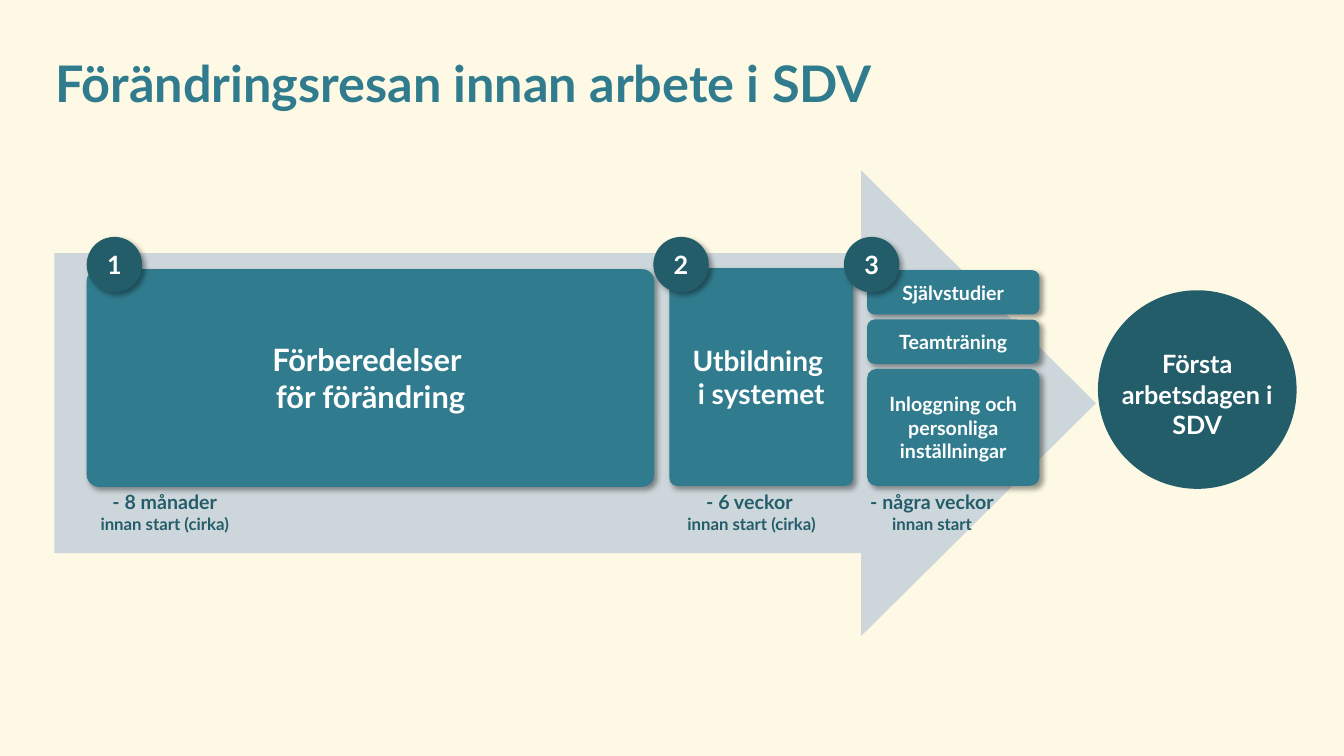
from dataclasses import dataclass

from lxml.etree import SubElement
from pptx import Presentation
from pptx.dml.color import RGBColor
from pptx.enum.shapes import MSO_SHAPE
from pptx.enum.text import MSO_ANCHOR, PP_ALIGN
from pptx.oxml.ns import qn
from pptx.shapes.autoshape import Shape
from pptx.slide import Slide
from pptx.text.text import TextFrame
from pptx.util import Inches, Pt

COLORS = {
    "background": "FDF9E4",
    "arrow": "CDD7DB",
    "teal": "307C8E",
    "dark": "245D6A",
    "white": "FFFFFF",
    "shadow": "000000",
}
FONT = "Lato"
BADGE_SIZE = 0.55
BADGE_TOP = 2.35
LABEL_TOP = 4.81
LABEL_WIDTH = 1.83


@dataclass
class Step:
    left: float
    top: float
    width: float
    height: float
    corner: float
    size: int
    lines: list[str]


@dataclass
class Milestone:
    badge_left: float
    label_left: float
    time: str
    note: str


STEPS = [
    Step(8.6, 2.68, 1.71, 0.44, 0.167, 14, ["Självstudier"]),
    Step(8.6, 3.17, 1.71, 0.44, 0.167, 14, ["Teamträning"]),
    Step(8.6, 3.66, 1.71, 1.16, 0.08, 14, ["Inloggning och personliga inställningar"]),
    Step(6.64, 2.66, 1.82, 2.16, 0.04, 20, ["Utbildning ", "i systemet"]),
    Step(0.86, 2.67, 5.63, 2.16, 0.056, 22, ["Förberedelser ", "för förändring"]),
]
MILESTONES = [
    Milestone(0.86, 0.72, "- 8 månader", "innan start (cirka)"),
    Milestone(6.48, 6.54, "- 6 veckor ", "innan start (cirka)"),
    Milestone(8.37, 8.33, "- några veckor", "innan start"),
]


def rgb(name: str) -> RGBColor:
    return RGBColor.from_string(COLORS[name])


def write_lines(frame: TextFrame, lines: list[str], sizes: list[int], color: str,
                align: PP_ALIGN = PP_ALIGN.CENTER) -> None:
    frame.word_wrap = True
    frame.text = "\n".join(lines)
    for paragraph, size in zip(frame.paragraphs, sizes):
        paragraph.alignment = align
        paragraph.font.name = FONT
        paragraph.font.size = Pt(size)
        paragraph.font.bold = True
        paragraph.font.color.rgb = rgb(color)


def add_filled(slide: Slide, kind: MSO_SHAPE, left: float, top: float,
               width: float, height: float, fill: str) -> Shape:
    shape = slide.shapes.add_shape(
        kind, Inches(left), Inches(top), Inches(width), Inches(height))
    shape.shadow.inherit = False
    shape.fill.solid()
    shape.fill.fore_color.rgb = rgb(fill)
    shape.line.fill.background()
    return shape


def add_shadow(shape: Shape) -> None:
    """Cast a soft shadow down to the right."""
    effects = shape.element.spPr.find(qn("a:effectLst"))
    shadow = SubElement(effects, qn("a:outerShdw"), blurRad=str(Pt(4)), dist=str(Pt(3)),
                        dir=str(45 * 60000), algn="tl", rotWithShape="0")
    color = SubElement(shadow, qn("a:srgbClr"), val=COLORS["shadow"])
    SubElement(color, qn("a:alpha"), val="40000")


def add_text(slide: Slide, left: float, top: float, width: float, height: float,
             lines: list[str], sizes: list[int], color: str) -> None:
    box = slide.shapes.add_textbox(
        Inches(left), Inches(top), Inches(width), Inches(height))
    write_lines(box.text_frame, lines, sizes, color)


def add_title(slide: Slide, text: str) -> None:
    title = slide.shapes.title
    title.left, title.top = Inches(0.45), Inches(0.39)
    title.width, title.height = Inches(12), Inches(0.8)
    title.text_frame.vertical_anchor = MSO_ANCHOR.MIDDLE
    write_lines(title.text_frame, [text], [36], "teal", PP_ALIGN.LEFT)
    title.text_frame.paragraphs[0].line_spacing = 1.1


def add_step(slide: Slide, step: Step) -> None:
    card = add_filled(slide, MSO_SHAPE.ROUNDED_RECTANGLE, step.left, step.top,
                      step.width, step.height, "teal")
    card.adjustments[0] = step.corner
    add_shadow(card)
    card.text_frame.vertical_anchor = MSO_ANCHOR.MIDDLE
    write_lines(card.text_frame, step.lines, [step.size] * len(step.lines), "white")


def add_badge(slide: Slide, left: float, number: int) -> None:
    badge = add_filled(slide, MSO_SHAPE.OVAL, left, BADGE_TOP, BADGE_SIZE, BADGE_SIZE, "dark")
    add_shadow(badge)
    badge.text_frame.vertical_anchor = MSO_ANCHOR.MIDDLE
    write_lines(badge.text_frame, [str(number)], [18], "white")


def main() -> None:
    deck = Presentation()
    deck.slide_width, deck.slide_height = Inches(13.33), Inches(7.5)
    slide = deck.slides.add_slide(deck.slide_layouts.get_by_name("Title Only"))
    slide.background.fill.solid()
    slide.background.fill.fore_color.rgb = rgb("background")

    add_title(slide, "Förändringsresan innan arbete i SDV")
    journey = add_filled(slide, MSO_SHAPE.RIGHT_ARROW, 0.54, 1.69, 10.33, 4.62, "arrow")
    journey.adjustments[0] = 0.644
    journey.adjustments[1] = 0.504

    add_filled(slide, MSO_SHAPE.OVAL, 10.89, 2.88, 1.97, 1.97, "dark")
    add_text(slide, 10.96, 3.41, 1.83, 1.01, ["Första arbetsdagen i SDV"], [18], "white")

    for step in STEPS:
        add_step(slide, step)
    for number, milestone in enumerate(MILESTONES, start=1):
        add_badge(slide, milestone.badge_left, number)
        add_text(slide, milestone.label_left, LABEL_TOP, LABEL_WIDTH, 0.54,
                 [milestone.time, milestone.note], [14, 12], "dark")

    deck.save("out.pptx")


if __name__ == "__main__":
    main()
